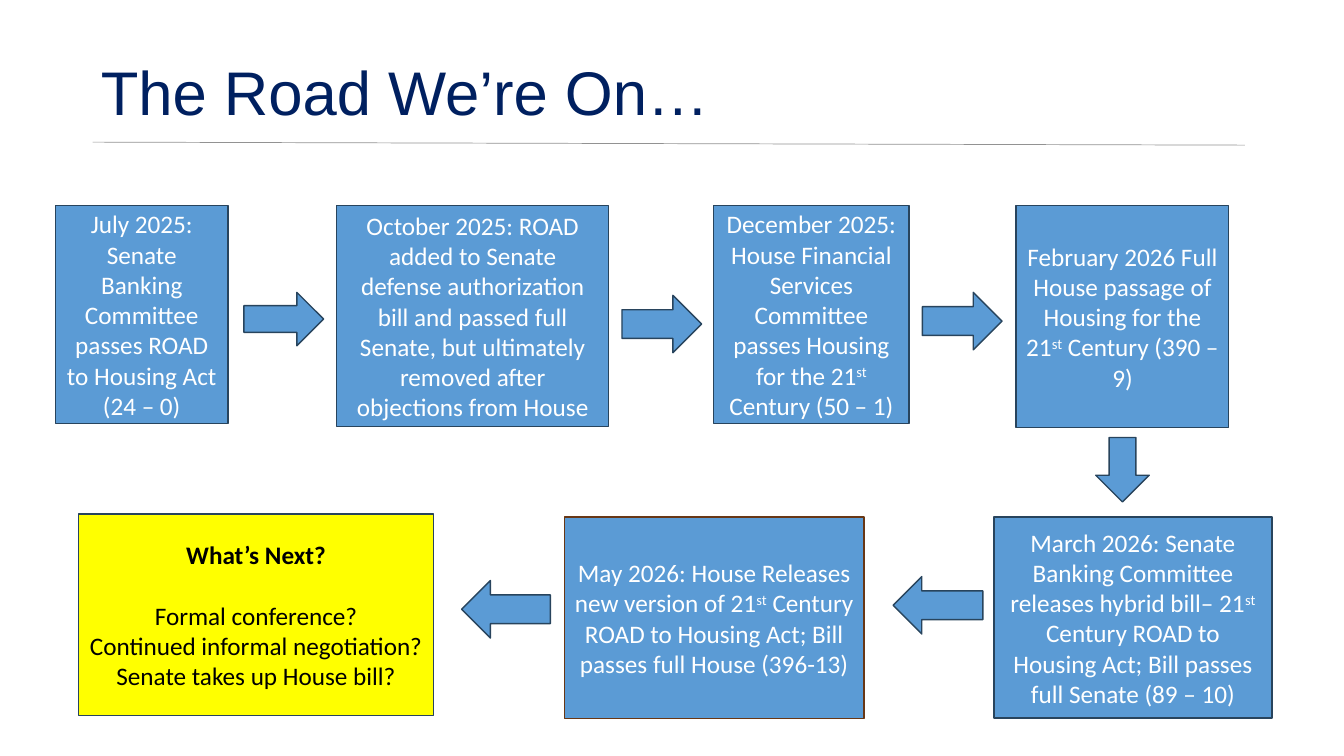
from dataclasses import dataclass

from lxml import etree
from pptx import Presentation
from pptx.dml.color import RGBColor
from pptx.enum.shapes import MSO_CONNECTOR, MSO_SHAPE
from pptx.enum.text import MSO_ANCHOR, MSO_AUTO_SIZE, PP_ALIGN
from pptx.oxml.ns import qn
from pptx.util import Inches, Pt

RECT = MSO_SHAPE.RECTANGLE
RIGHT = MSO_SHAPE.RIGHT_ARROW
LEFT = MSO_SHAPE.LEFT_ARROW
DOWN = MSO_SHAPE.DOWN_ARROW
STRAIGHT = MSO_CONNECTOR.STRAIGHT
MIDDLE = MSO_ANCHOR.MIDDLE
NO_FIT = MSO_AUTO_SIZE.NONE
ALIGN_CENTER = PP_ALIGN.CENTER
ALIGN_LEFT = PP_ALIGN.LEFT

SLIDE_W, SLIDE_H = Inches(13.333), Inches(7.5)


@dataclass(frozen=True)
class Theme:
    title_font: str = "Arial"
    body_font: str = "Calibri"
    title_size: float = 44
    body_size: float = 18
    gap: float = 22
    title: str = "002060"
    step: str = "5B9BD5"
    step_text: str = "FFFFFF"
    outline: str = "28445D"
    may_outline: str = "683715"
    next_fill: str = "FFFF00"
    next_text: str = "000000"
    rule: str = "929292"


THEME = Theme()


@dataclass(frozen=True)
class Area:
    """Percentages of the slide's width and height."""
    x: float
    y: float
    w: float
    h: float

    def emu(self) -> tuple[int, int, int, int]:
        return (share(self.x, SLIDE_W), share(self.y, SLIDE_H),
                share(self.w, SLIDE_W), share(self.h, SLIDE_H))


@dataclass(frozen=True)
class Step:
    area: Area
    text: str
    outline: str = THEME.outline


@dataclass(frozen=True)
class Arrow:
    kind: MSO_SHAPE
    area: Area


TOP, BOTTOM = 27.2, 68.4

STEPS = [
    Step(Area(4.13, TOP, 12.83, 28.8),
         "July 2025: Senate Banking Committee passes ROAD to Housing Act (24 – 0)"),
    Step(Area(25.05, TOP, 20.25, 29.2),
         "October 2025: ROAD added to Senate defense authorization bill and passed "
         "full Senate, but ultimately removed after objections from House"),
    Step(Area(53.1, TOP, 14.55, 28.8),
         "December 2025: House Financial Services Committee passes Housing "
         "for the 21^st^ Century (50 – 1)"),
    Step(Area(75.6, TOP, 15.83, 29.33),
         "February 2026 Full House passage of Housing for the 21^st^ Century (390 – 9)"),
    Step(Area(73.95, BOTTOM, 20.7, 26.6),
         "March 2026: Senate Banking Committee releases hybrid bill– 21^st^ Century "
         "ROAD to Housing Act; Bill passes full Senate (89 – 10)"),
    Step(Area(42, BOTTOM, 22.28, 26.67),
         "May 2026: House Releases new version of 21^st^ Century ROAD to Housing Act; "
         "Bill passes full House (396-13)", THEME.may_outline),
]

ARROWS = [
    Arrow(RIGHT, Area(18.15, 38.67, 5.93, 7.07)),
    Arrow(RIGHT, Area(46.28, 39.07, 5.93, 7.6)),
    Arrow(RIGHT, Area(68.63, 38.67, 5.93, 7.6)),
    Arrow(DOWN, Area(81.53, 57.87, 3.98, 8.53)),
    Arrow(LEFT, Area(66.45, 76.27, 6.68, 7.6)),
    Arrow(LEFT, Area(34.35, 76.8, 6.6, 7.6)),
]

NEXT_AREA = Area(5.85, 68, 26.4, 26.67)
NEXT_QUESTIONS = ["Formal conference?", "Continued informal negotiation?",
                  "Senate takes up House bill?"]


def share(percent: float, whole: int) -> int:
    return round(whole * percent / 100)


def write(p, text: str, *, font: str = THEME.body_font, size: float = THEME.body_size,
          color: str = THEME.step_text, bold: bool = False, align=ALIGN_CENTER,
          before: float = 0) -> None:
    p.alignment = align
    p.space_before = Pt(before)
    for i, part in enumerate(text.split("^")):
        r = p.add_run()
        r.text = part
        r.font.name = font
        r.font.size = Pt(size)
        r.font.bold = bold
        r.font.color.rgb = RGBColor.from_string(color)
        if i % 2:
            r._r.get_or_add_rPr().set("baseline", "30000")


def add_block(s, kind: MSO_SHAPE, area: Area, fill: str = THEME.step,
              outline: str = THEME.outline):
    sp = s.shapes.add_shape(kind, *area.emu())
    sp.shadow.inherit = False
    sp.fill.solid()
    sp.fill.fore_color.rgb = RGBColor.from_string(fill)
    sp.line.color.rgb = RGBColor.from_string(outline)
    sp.line.width = Pt(1)
    tf = sp.text_frame
    tf.word_wrap = True
    tf.vertical_anchor = MIDDLE
    return sp


def add_rule(s) -> None:
    line = s.shapes.add_connector(STRAIGHT, share(6.9, SLIDE_W), share(18.8, SLIDE_H),
                                  share(92.63, SLIDE_W), share(19.2, SLIDE_H))
    line.line.color.rgb = RGBColor.from_string(THEME.rule)
    line.line.width = Pt(0.5)
    etree.SubElement(line._element.spPr, qn("a:effectLst"))


def add_title(s) -> None:
    sp = s.shapes.title
    sp.left, sp.top, sp.width, sp.height = Area(6.75, 6.8, 83.7, 10.53).emu()
    tf = sp.text_frame
    tf.auto_size = NO_FIT
    tf.vertical_anchor = MIDDLE
    write(tf.paragraphs[0], "The Road We’re On…", font=THEME.title_font,
          size=THEME.title_size, color=THEME.title, align=ALIGN_LEFT)


def add_next(s) -> None:
    tf = add_block(s, RECT, NEXT_AREA, THEME.next_fill).text_frame
    write(tf.paragraphs[0], "What’s Next?", color=THEME.next_text, bold=True)
    for i, question in enumerate(NEXT_QUESTIONS):
        write(tf.add_paragraph(), question, color=THEME.next_text,
              before=0 if i else THEME.gap)


def main() -> None:
    prs = Presentation()
    prs.slide_width, prs.slide_height = SLIDE_W, SLIDE_H
    s = prs.slides.add_slide(prs.slide_layouts[5])
    add_rule(s)
    add_title(s)
    for step in STEPS:
        sp = add_block(s, RECT, step.area, outline=step.outline)
        write(sp.text_frame.paragraphs[0], step.text)
    for arrow in ARROWS:
        add_block(s, arrow.kind, arrow.area)
    add_next(s)
    prs.save("out.pptx")


if __name__ == "__main__":
    main()
